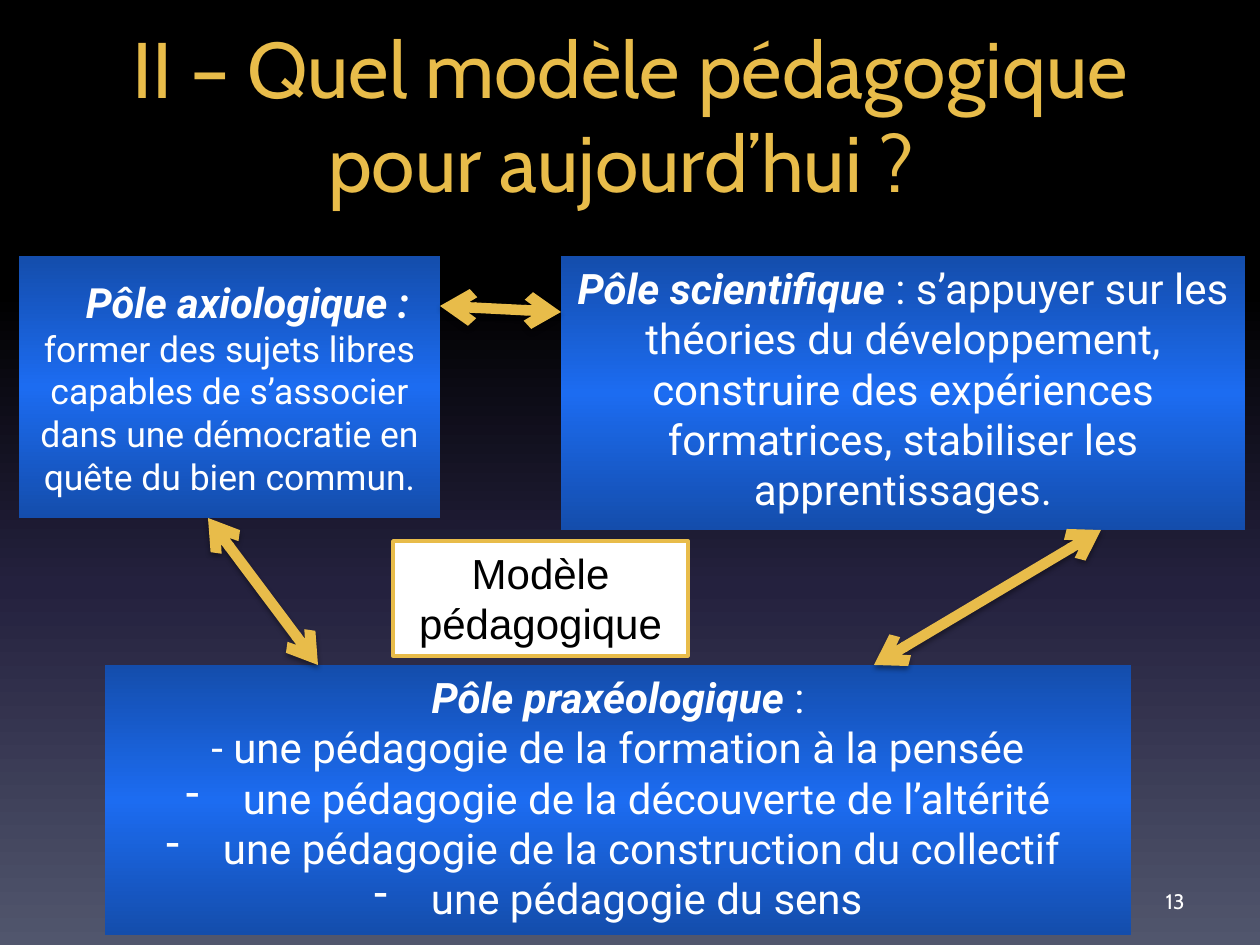
from dataclasses import dataclass

from lxml import etree
from pptx import Presentation
from pptx.dml.color import RGBColor
from pptx.enum.shapes import MSO_CONNECTOR as Connector
from pptx.enum.shapes import MSO_SHAPE as Preset
from pptx.enum.text import MSO_ANCHOR as Anchor
from pptx.enum.text import MSO_AUTO_SIZE as AutoSize
from pptx.enum.text import PP_ALIGN as Align
from pptx.oxml.ns import qn
from pptx.util import Emu, Pt

PX_PER_INCH = 126


@dataclass(frozen=True)
class Theme:
    gold: str = "E8BC4A"
    white: str = "FFFFFF"
    black: str = "000000"
    page_stops: tuple = ((0, "000000"), (31, "000000"), (62, "24213E"), (100, "51566D"))
    pole_stops: tuple = ((0, "144DAC"), (50, "1C6CF1"), (100, "144DAC"))
    heading_font: str = "Cabin"
    pole_font: str = "Roboto"
    model_font: str = "Arial"
    title_size: float = 45
    body_size: float = 24
    lead_size: float = 23.8
    detail_size: float = 20.3
    number_size: float = 12


THEME = Theme()


@dataclass(frozen=True)
class Area:
    left: int
    top: int
    width: int
    height: int


@dataclass(frozen=True)
class Span:
    text: str
    size: float = THEME.body_size
    strong: bool = False


@dataclass(frozen=True)
class Para:
    spans: tuple[Span, ...]
    indent: int = 0
    dash: bool = False


@dataclass(frozen=True)
class Pole:
    area: Area
    paras: tuple[Para, ...]
    anchor: Anchor = Anchor.TOP


@dataclass(frozen=True)
class Arrow:
    start: tuple[int, int]
    end: tuple[int, int]


TITLE_AREA = Area(63, 13, 1134, 158)
NUMBER_AREA = Area(903, 876, 294, 50)
MODEL_AREA = Area(393, 541, 295, 115)

POLES = (
    Pole(Area(19, 256, 421, 262), (
        Para((
            Span("Pôle axiologique : ", THEME.lead_size, True),
            Span("former des sujets libres capables de s’associer dans une démocratie "
                 "en quête du bien commun.", THEME.detail_size),
        ), indent=36),
    ), Anchor.MIDDLE),
    Pole(Area(105, 665, 1026, 270), (
        Para((Span("Pôle praxéologique ", strong=True), Span(":"))),
        Para((Span("- une pédagogie de la formation à la pensée"),)),
        Para((Span(" une pédagogie de la découverte de l’altérité"),), dash=True),
        Para((Span(" une pédagogie de la construction du collectif "),), dash=True),
        Para((Span(" une pédagogie du sens"),), dash=True),
    )),
    Pole(Area(561, 256, 684, 274), (
        Para((
            Span("Pôle scientifique ", strong=True),
            Span(": s’appuyer sur les théories du développement, construire des "
                 "expériences formatrices, stabiliser les apprentissages."),
        )),
    )),
)

ARROWS = (
    Arrow((208, 518), (318, 665)),
    Arrow((440, 306), (561, 312)),
    Arrow((1101, 530), (874, 665)),
)


def px(length: int) -> Emu:
    return Emu(round(length * 914400 / PX_PER_INCH))


def frame(area: Area) -> tuple[Emu, ...]:
    return px(area.left), px(area.top), px(area.width), px(area.height)


def rgb(color: str) -> RGBColor:
    return RGBColor.from_string(color)


def add_node(parent, tag: str, **attributes):
    return etree.SubElement(parent, qn(tag), attributes)


def fill_downwards(fill, owner, stops: tuple) -> None:
    """Give fill a top-to-bottom gradient; owner is the element holding it."""
    fill.gradient()
    fill.gradient_angle = 270
    stop_list = owner.xpath(".//a:gsLst")[0]
    for old_stop in list(stop_list):
        stop_list.remove(old_stop)
    for percent, color in stops:
        stop = add_node(stop_list, "a:gs", pos=str(percent * 1000))
        add_node(stop, "a:srgbClr", val=color)


def style_para(para, font: str, size: float, color: str, align: Align) -> None:
    para.alignment = align
    para.font.name = font
    para.font.size = Pt(size)
    para.font.color.rgb = rgb(color)


def write_line(box, text: str, font: str, size: float, color: str, align: Align,
               anchor: Anchor) -> None:
    box.text_frame.word_wrap = True
    box.text_frame.vertical_anchor = anchor
    para = box.text_frame.paragraphs[0]
    para.text = text
    style_para(para, font, size, color, align)


def add_rectangle(page, area: Area):
    box = page.shapes.add_shape(Preset.RECTANGLE, *frame(area))
    box.shadow.inherit = False
    return box


def fill_para(para, content: Para) -> None:
    style_para(para, THEME.pole_font, content.spans[0].size, THEME.white, Align.CENTER)
    properties = para._p.get_or_add_pPr()
    if content.indent:
        properties.set("indent", str(px(content.indent)))
    if content.dash:
        properties.set("marL", str(px(47)))
        properties.set("indent", str(-px(47)))
        bullet = etree.Element(qn("a:buChar"), char="-")
        properties.insert(0, bullet)
    for span in content.spans:
        run = para.add_run()
        run.text = span.text
        run.font.size = Pt(span.size)
        run.font.bold = run.font.italic = span.strong


def add_pole(page, pole: Pole) -> None:
    box = add_rectangle(page, pole.area)
    fill_downwards(box.fill, box.element, THEME.pole_stops)
    box.line.fill.background()
    text = box.text_frame
    text.word_wrap = True
    text.vertical_anchor = pole.anchor
    for index, content in enumerate(pole.paras):
        fill_para(text.add_paragraph() if index else text.paragraphs[0], content)


def add_model(page) -> None:
    box = add_rectangle(page, MODEL_AREA)
    box.fill.solid()
    box.fill.fore_color.rgb = rgb(THEME.white)
    box.line.color.rgb = rgb(THEME.gold)
    box.line.width = Pt(2)
    write_line(box, "Modèle pédagogique", THEME.model_font, THEME.body_size,
               THEME.black, Align.CENTER, Anchor.TOP)
    box.text_frame.auto_size = AutoSize.SHAPE_TO_FIT_TEXT


def add_arrow(page, arrow: Arrow) -> None:
    """Draw a two-headed arrow with a soft shadow below it."""
    ends = (px(value) for value in arrow.start + arrow.end)
    connector = page.shapes.add_connector(Connector.STRAIGHT, *ends)
    connector.line.color.rgb = rgb(THEME.gold)
    connector.line.width = Pt(6)
    for tag in ("a:headEnd", "a:tailEnd"):
        add_node(connector.line._get_or_add_ln(), tag, type="arrow")
    effects = add_node(connector.element.spPr, "a:effectLst")
    shadow = add_node(effects, "a:outerShdw", blurRad=str(Pt(3.1)), dist=str(Pt(1.6)),
                      dir="5400000", rotWithShape="0")
    color = add_node(shadow, "a:srgbClr", val=THEME.black)
    add_node(color, "a:alpha", val="38000")


def main() -> None:
    deck = Presentation()
    deck.slide_width, deck.slide_height = px(1260), px(945)
    page = deck.slides.add_slide(deck.slide_layouts[5])
    fill_downwards(page.background.fill, page.element, THEME.page_stops)

    title = page.shapes.title
    title.left, title.top, title.width, title.height = frame(TITLE_AREA)
    write_line(title, "II – Quel modèle pédagogique pour aujourd’hui ? ",
               THEME.heading_font, THEME.title_size, THEME.gold, Align.CENTER, Anchor.TOP)
    title.text_frame.auto_size = AutoSize.NONE

    number = page.shapes.add_textbox(*frame(NUMBER_AREA))
    write_line(number, "13", THEME.heading_font, THEME.number_size, THEME.white,
               Align.RIGHT, Anchor.MIDDLE)

    for pole in POLES:
        add_pole(page, pole)
    add_model(page)
    for arrow in ARROWS:
        add_arrow(page, arrow)
    deck.save("out.pptx")


if __name__ == "__main__":
    main()
